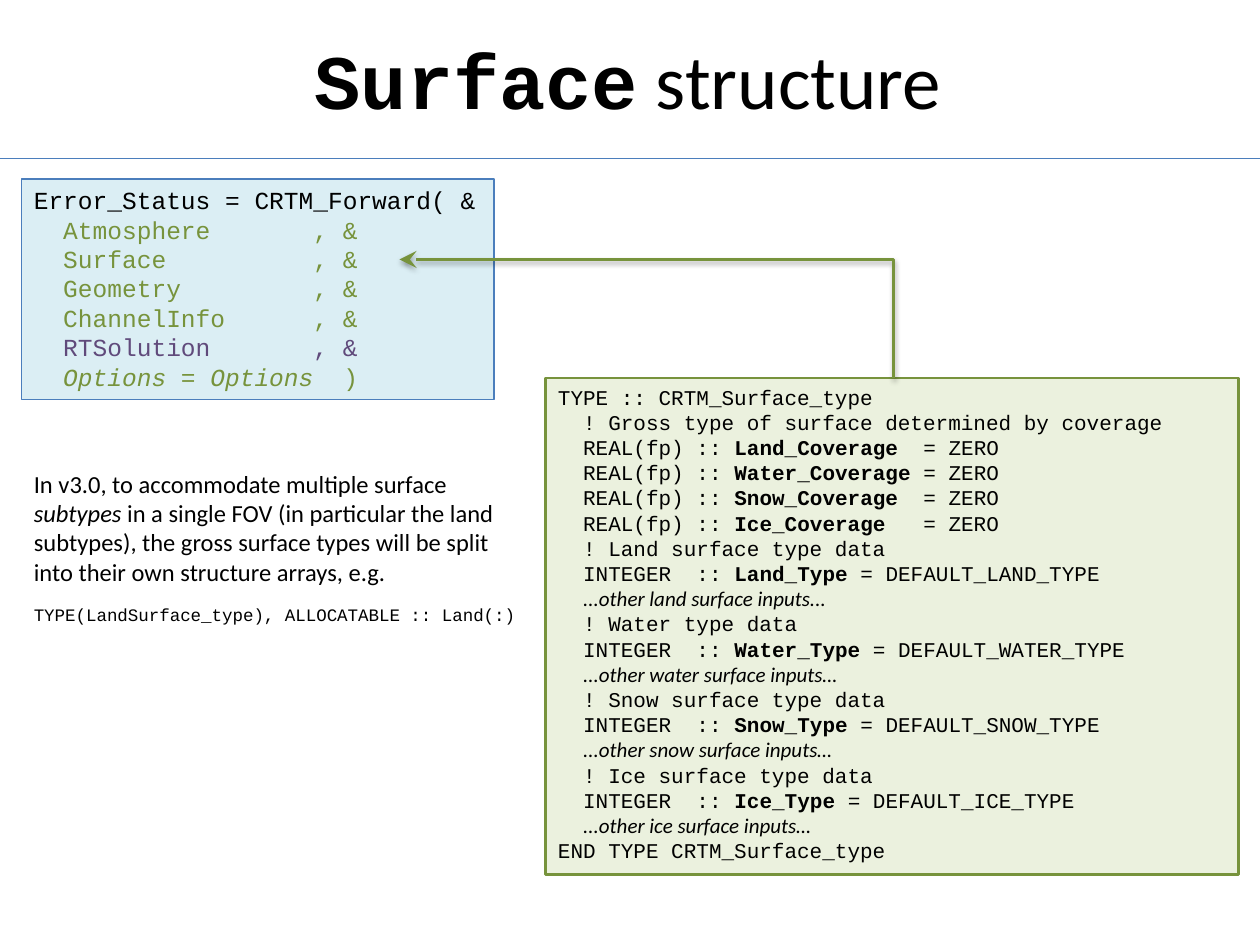
from lxml import etree
from pptx import Presentation
from pptx.dml.color import RGBColor
from pptx.enum import shapes, text
from pptx.oxml import parse_xml
from pptx.oxml.ns import nsdecls, qn
from pptx.util import Inches, Pt

BLACK = RGBColor(0x00, 0x00, 0x00)
BLUE = RGBColor(0x4B, 0x7E, 0xBC)
PALE_BLUE = RGBColor(0xDB, 0xEE, 0xF4)
GREEN = RGBColor(0x77, 0x93, 0x3C)
PALE_GREEN = RGBColor(0xEB, 0xF1, 0xDE)
PURPLE = RGBColor(0x60, 0x4A, 0x7B)
CODE, BODY = "Courier New", "Calibri"


def fill_text(frame, lines, size, font=CODE):
    """Write lines of (text, font overrides) runs, one paragraph per line."""
    frame.word_wrap = True
    for index, runs in enumerate(lines):
        paragraph = frame.paragraphs[0] if index == 0 else frame.add_paragraph()
        paragraph.alignment = text.PP_ALIGN.LEFT
        paragraph.font.size = Pt(size)
        for words, style in runs:
            run = paragraph.add_run()
            run.text = words
            run.font.size = Pt(style.get("size", size))
            run.font.name = style.get("font", font)
            run.font.bold = style.get("bold", False)
            run.font.italic = style.get("italic", False)
            run.font.color.rgb = style.get("color", BLACK)


def add_text(slide, left, top, width, height, lines, size, font):
    box = slide.shapes.add_textbox(Inches(left), Inches(top), Inches(width), Inches(height))
    fill_text(box.text_frame, lines, size, font)
    return box.text_frame


def add_code_box(slide, left, top, width, height, lines, size, fill, line, weight):
    shape = slide.shapes.add_shape(
        shapes.MSO_SHAPE.RECTANGLE, Inches(left), Inches(top), Inches(width), Inches(height))
    shape.shadow.inherit = False
    shape.fill.solid()
    shape.fill.fore_color.rgb = fill
    shape.line.color.rgb = line
    shape.line.width = Pt(weight)
    shape.text_frame.vertical_anchor = text.MSO_ANCHOR.TOP
    fill_text(shape.text_frame, lines, size)


def add_line(slide, kind, start, end, color, weight):
    connector = slide.shapes.add_connector(kind, *map(Inches, start + end))
    connector.line.color.rgb = color
    connector.line.width = Pt(weight)
    effects = etree.SubElement(connector._element.spPr, qn("a:effectLst"))
    return connector, effects


def add_bent_arrow(slide):
    """One-bend arrow, turned so that it rises and then runs left."""
    arrow, effects = add_line(
        slide, shapes.MSO_CONNECTOR.ELBOW, (4.66, 4.49), (5.6, 0.57), GREEN, 1.5)
    properties = arrow._element.spPr
    properties.find(qn("a:prstGeom")).set("prst", "bentConnector2")
    properties.find(qn("a:xfrm")).set("rot", str(270 * 60000))
    etree.SubElement(properties.find(qn("a:ln")), qn("a:tailEnd"), type="stealth", w="lg", len="lg")
    effects.append(parse_xml(
        f'<a:outerShdw {nsdecls("a")} blurRad="{Pt(3.1)}" dist="{Pt(1.6)}" dir="5400000" '
        'rotWithShape="0"><a:srgbClr val="000000"><a:alpha val="38000"/></a:srgbClr></a:outerShdw>'))


def call_lines():
    arguments = [("Atmosphere", GREEN), ("Surface", GREEN), ("Geometry", GREEN),
                 ("ChannelInfo", GREEN), ("RTSolution", PURPLE)]
    lines = [[("Error_Status = CRTM_Forward( &", {})]]
    lines += [[(f"  {name:<17}, &", {"color": color})] for name, color in arguments]
    lines.append([("  Options = Options  ", {"color": GREEN, "italic": True}),
                  (")", {"color": GREEN})])
    return lines


def type_lines():
    surfaces = {"Land": "...", "Water": "…", "Snow": "…", "Ice": "…"}
    lines = [[("TYPE :: CRTM_Surface_type", {})],
             [("  ! Gross type of surface determined by coverage", {})]]
    for name in surfaces:
        field = f"{name}_Coverage"
        gap = " " * (15 - len(field))
        lines.append([("  REAL(fp) :: ", {}), (field, {"bold": True}), (f"{gap}= ZERO", {})])
    for name, ending in surfaces.items():
        comment = f"  ! {name} type data" if name == "Water" else f"  ! {name} surface type data"
        lines += [
            [(comment, {})],
            [("  INTEGER  :: ", {}), (f"{name}_Type ", {"bold": True}),
             (f"= DEFAULT_{name.upper()}_TYPE", {})],
            [("  ", {}), (f"...other {name.lower()} surface inputs{ending}",
                          {"font": BODY, "italic": True})],
        ]
    lines.append([("END TYPE CRTM_Surface_type", {})])
    return lines


def main():
    presentation = Presentation()
    presentation.slide_width, presentation.slide_height = Inches(10), Inches(7.5)
    slide = presentation.slides.add_slide(presentation.slide_layouts[6])

    # Title and rule
    add_line(slide, shapes.MSO_CONNECTOR.STRAIGHT, (0, 1.26), (10, 1.26), BLUE, 0.75)
    title = add_text(slide, 1.15, 0, 7.67, 1.25,
                     [[("Surface", {"font": CODE, "bold": True}), (" structure", {})]], 44, BODY)
    title.vertical_anchor = text.MSO_ANCHOR.MIDDLE
    title.paragraphs[0].alignment = text.PP_ALIGN.CENTER

    # Function call, type definition and the arrow between them
    add_code_box(slide, 0.17, 1.42, 3.75, 1.75, call_lines(), 14, PALE_BLUE, BLUE, 1)
    add_code_box(slide, 4.33, 3, 5.5, 3.94, type_lines(), 12, PALE_GREEN, GREEN, 1.5)
    add_bent_arrow(slide)

    # Note on the planned split
    note = add_text(slide, 0.17, 3.67, 4.08, 1.33, [
        [("In v3.0, to accommodate multiple surface ", {}), ("subtypes", {"italic": True}),
         (" in a single FOV (in particular the land subtypes), the gross surface types "
          "will be split into their own structure arrays, e.g.", {})],
        [("TYPE(LandSurface_type), ALLOCATABLE :: Land(:)", {"font": CODE, "size": 10})],
    ], 14, BODY)
    note.paragraphs[1].font.size = Pt(10)
    note.paragraphs[1].space_before = Pt(10)

    presentation.save("out.pptx")


if __name__ == "__main__":
    main()
